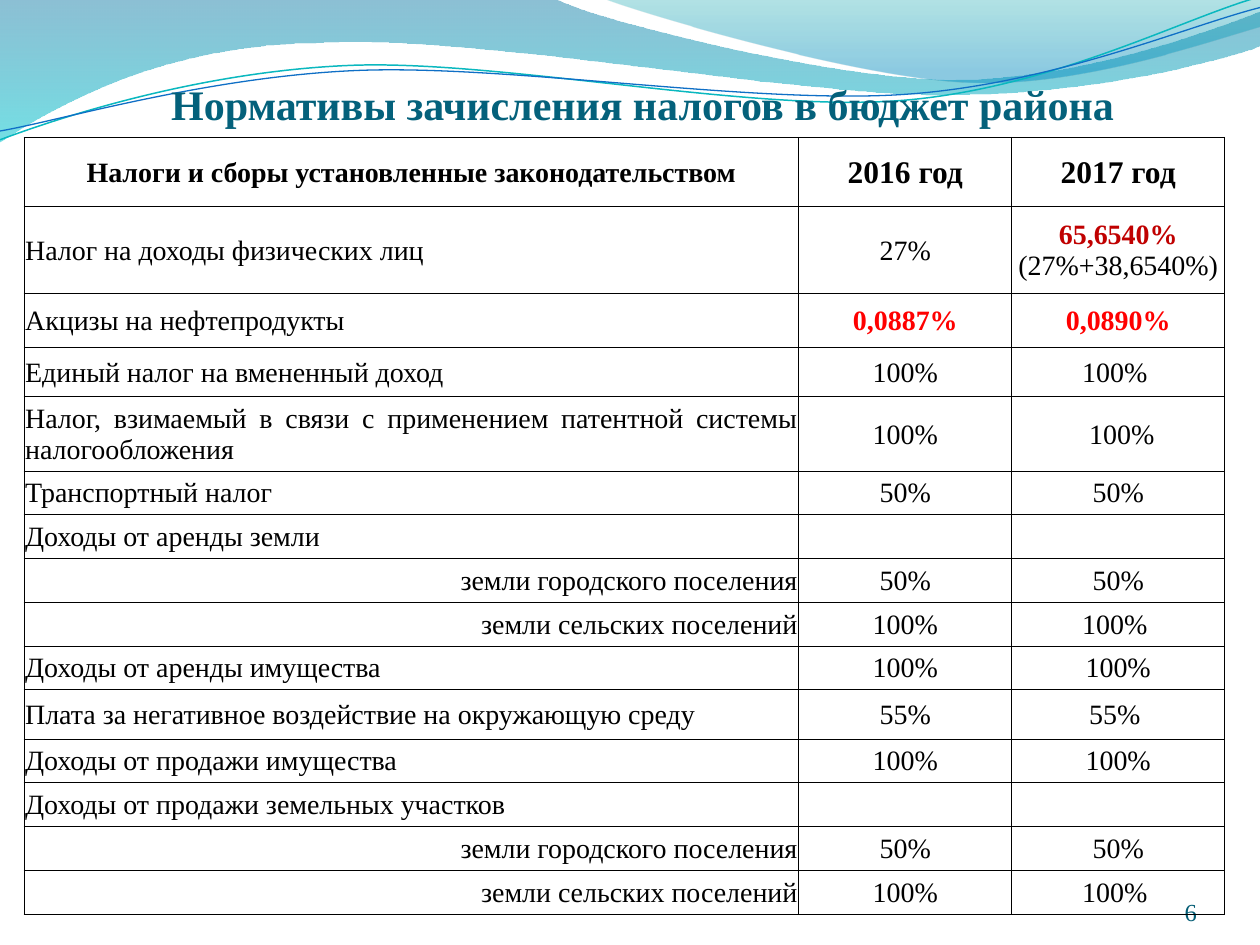
from dataclasses import dataclass
from typing import NamedTuple, Optional

from lxml.etree import SubElement
from pptx import Presentation
from pptx.dml.color import RGBColor
from pptx.enum.text import MSO_ANCHOR as Anchor, PP_ALIGN as Align
from pptx.oxml.ns import qn
from pptx.util import Inches, Pt


@dataclass(frozen=True)
class Theme:
    font: str = "Times New Roman"
    title: str = "04617B"
    number: str = "045D75"
    ink: str = "000000"
    red: str = "FF0000"
    dark_red: str = "C00000"
    title_size: int = 24
    year_size: int = 18
    body_size: int = 16
    number_size: int = 14
    border: float = 0.5


THEME = Theme()


class Line(NamedTuple):
    text: str
    size: int = THEME.body_size
    color: str = THEME.ink
    bold: bool = False


class TaxRow(NamedTuple):
    tax: Line
    year_2016: list[Line]
    year_2017: list[Line]
    height: float = 0.35
    align: Align = Align.JUSTIFY


class Stop(NamedTuple):
    position: float
    color: str
    opacity: int


@dataclass(frozen=True)
class Wave:
    """Each segment is one end point, or two control points and an end point."""
    start: tuple
    segments: list
    stops: Optional[list[Stop]] = None
    stroke: Optional[tuple[str, float]] = None


WAVES = [
    Wave((0, -0.01), [
        [(4.4, -0.01)],
        [(4.76, 0.17), (6.64, 0.63), (7.58, 0.63)],
        [(8.53, 0.63), (9.58, 0.26), (10, 0.09)],
        [(10.01, 0.36)],
        [(9.83, 0.44), (8.7, 0.76), (7.46, 0.75)],
        [(6.22, 0.75), (3.82, 0.28), (2.57, 0.34)],
        [(1.29, 0.35), (0.46, 0.83), (-0.01, 1.13)],
        [(0, -0.01)],
    ], stops=[Stop(0, "0074A1", 45), Stop(1, "00C6CF", 55)]),
    Wave((4.79, -0.01), [
        [(5.09, 0.11), (6.82, 0.62), (7.69, 0.65)],
        [(8.56, 0.69), (9.61, 0.32), (10, 0.21)],
        [(10, 0)],
        [(4.79, -0.01)],
    ], stops=[Stop(0, "00A1A9", 30), Stop(0.8, "008BBF", 45)]),
    Wave((0, 1.11), [
        [(0.48, 0.93), (1.58, 0.57), (2.77, 0.52)],
        [(3.95, 0.47), (5.93, 0.89), (7.13, 0.8)],
        [(8.33, 0.71), (9.38, 0.15), (9.98, -0.02)],
    ], stroke=("0AB8BF", 0.85)),
    Wave((0, 1.04), [
        [(0.47, 0.96), (1.64, 0.61), (2.83, 0.56)],
        [(4.03, 0.51), (5.97, 0.83), (7.17, 0.75)],
        [(8.36, 0.67), (9.41, 0.21), (10, 0.06)],
    ], stroke=("0F6FC6", 0.75)),
]


def tax(name: str, first: str = "", second: str = "", height: float = 0.35,
        align: Align = Align.JUSTIFY) -> TaxRow:
    return TaxRow(Line(name), [Line(first)], [Line(second)], height, align)


def year(label: str) -> list[Line]:
    return [Line(label, THEME.year_size, bold=True)]


def marked(value: str, color: str = THEME.red) -> Line:
    return Line(value, color=color, bold=True)


LAND_SHARES = [
    tax("земли городского поселения", "50%", "50%", align=Align.RIGHT),
    tax("земли сельских поселений", "100%", "100% ", align=Align.RIGHT),
]
ROWS = [
    TaxRow(Line("Налоги и сборы установленные законодательством", bold=True),
           year("2016 год"), year("2017 год"), 0.55, Align.CENTER),
    TaxRow(Line("Налог на доходы физических лиц"), [Line("27%")],
           [marked("65,6540%", THEME.dark_red), Line("(27%+38,6540%)")], 0.69),
    TaxRow(Line("Акцизы на нефтепродукты"), [marked("0,0887%")], [marked("0,0890%")], 0.43),
    tax("Единый налог на вмененный доход", "100%", "100% ", 0.39),
    tax("Налог, взимаемый в связи с применением патентной системы налогообложения",
        "100%", " 100%", 0.59),
    tax("Транспортный налог", "50%", "50%", 0.34),
    tax("Доходы от аренды земли"),
    *LAND_SHARES,
    tax("Доходы от аренды имущества", "100%", "100%", 0.34),
    tax("Плата за негативное воздействие на окружающую среду", "55%", "55% ", 0.4),
    tax("Доходы от продажи имущества", "100%", "100%", 0.34),
    tax("Доходы от продажи земельных участков"),
    *LAND_SHARES,
]
COLUMNS = [6.15, 1.69, 1.69]


def bend_segments(shape, segments: list) -> None:
    """Turn each run of three straight steps into one cubic curve."""
    steps = iter(list(shape._element.iter(qn("a:lnTo"))))
    for segment in segments:
        run = [next(steps) for _ in segment]
        if len(run) == 3:
            curve = run[0].makeelement(qn("a:cubicBezTo"))
            run[0].addprevious(curve)
            for step in run:
                curve.append(step[0])
                step.getparent().remove(step)


def draw_wave(slide, wave: Wave) -> None:
    points = [(Inches(x), Inches(y)) for segment in wave.segments for x, y in segment]
    builder = slide.shapes.build_freeform(*map(Inches, wave.start))
    builder.add_line_segments(points, close=wave.stops is not None)
    shape = builder.convert_to_shape()
    bend_segments(shape, wave.segments)
    shape.shadow.inherit = False
    if wave.stops:
        shape.line.fill.background()
        shape.fill.gradient()
        shape.fill.gradient_angle = 270
        for target, stop in zip(shape.fill.gradient_stops, wave.stops):
            target.position = stop.position
            target.color.rgb = RGBColor.from_string(stop.color)
        for color, stop in zip(shape._element.iter(qn("a:srgbClr")), wave.stops):
            SubElement(color, qn("a:alpha"), val=str(stop.opacity * 1000))
    else:
        color, width = wave.stroke
        shape.fill.background()
        shape.line.color.rgb = RGBColor.from_string(color)
        shape.line.width = Pt(width)


def write_lines(frame, lines: list[Line], align: Align) -> None:
    for index, line in enumerate(lines):
        paragraph = frame.add_paragraph() if index else frame.paragraphs[0]
        paragraph.alignment = align
        if not line.text:
            continue
        run = paragraph.add_run()
        run.text = line.text
        formats = {"name": THEME.font, "size": Pt(line.size), "bold": line.bold}
        for key, value in formats.items():
            setattr(run.font, key, value)
        run.font.color.rgb = RGBColor.from_string(line.color)


def draw_text(slide, box: tuple, line: Line, align: Align, top: float = 0) -> None:
    frame = slide.shapes.add_textbox(*map(Inches, box)).text_frame
    formats = {"word_wrap": True, "vertical_anchor": Anchor.BOTTOM, "margin_left": 0,
               "margin_right": 0, "margin_top": Inches(top), "margin_bottom": 0}
    for key, value in formats.items():
        setattr(frame, key, value)
    write_lines(frame, [line], align)


def fill_cell(cell, lines: list[Line], align: Align) -> None:
    inset = Inches(0.01)
    formats = {"vertical_anchor": Anchor.MIDDLE, "margin_left": inset,
               "margin_right": inset, "margin_top": inset, "margin_bottom": 0}
    for key, value in formats.items():
        setattr(cell, key, value)
    write_lines(cell.text_frame, lines, align)
    # Borders come before the fill in the cell properties
    properties = cell._tc.get_or_add_tcPr()
    for side in ("lnL", "lnR", "lnT", "lnB"):
        border = SubElement(properties, qn(f"a:{side}"), w=str(Pt(THEME.border)))
        SubElement(SubElement(border, qn("a:solidFill")), qn("a:srgbClr"), val=THEME.ink)
    cell.fill.background()


def draw_tax_table(slide) -> None:
    total = sum(row.height for row in ROWS)
    table = slide.shapes.add_table(len(ROWS), len(COLUMNS), Inches(0.19), Inches(1.09),
                                   Inches(sum(COLUMNS)), Inches(total)).table
    table.first_row = table.horz_banding = False
    for column, width in zip(table.columns, COLUMNS):
        column.width = Inches(width)
    for table_row, row in zip(table.rows, ROWS):
        table_row.height = Inches(row.height)
        name, first, second = table_row.cells
        fill_cell(name, [row.tax], row.align)
        fill_cell(first, row.year_2016, Align.CENTER)
        fill_cell(second, row.year_2017, Align.CENTER)


def main() -> None:
    deck = Presentation()
    deck.slide_width, deck.slide_height = Inches(10), Inches(7.5)
    slide = deck.slides.add_slide(deck.slide_layouts[6])
    # Wave header
    for wave in WAVES:
        draw_wave(slide, wave)
    # Title and page number
    draw_text(slide, (0.2, 0.55, 9.8, 0.47),
              Line("Нормативы зачисления налогов в бюджет района",
                   THEME.title_size, THEME.title, True), Align.CENTER, top=0.05)
    draw_text(slide, (8.67, 6.95, 0.83, 0.4),
              Line("6", THEME.number_size, THEME.number), Align.RIGHT)
    # Tax shares
    draw_tax_table(slide)
    deck.save("out.pptx")


if __name__ == "__main__":
    main()
